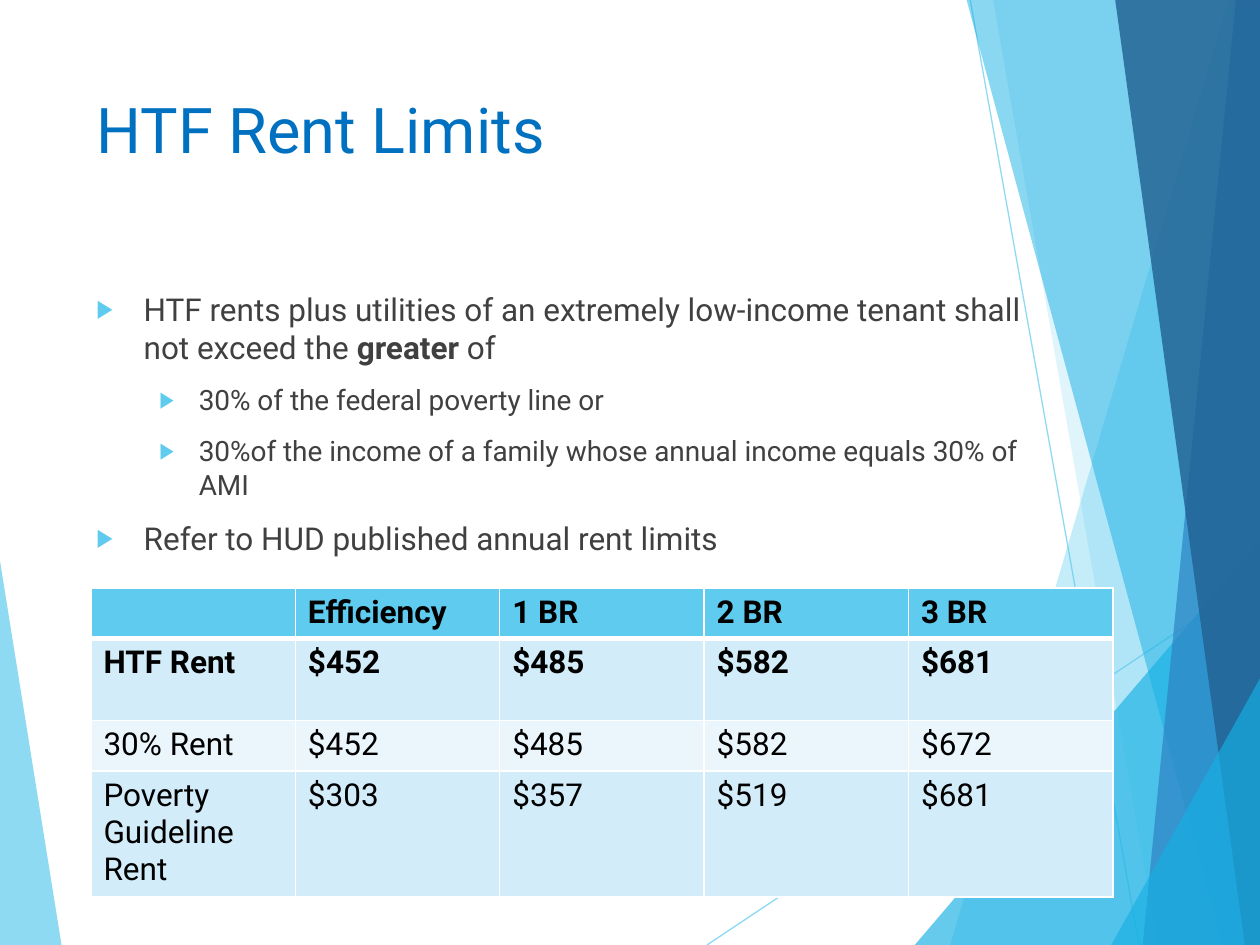
from lxml import etree
from pptx import Presentation
from pptx.dml.color import RGBColor
from pptx.enum.shapes import MSO_CONNECTOR
from pptx.enum.text import MSO_ANCHOR, PP_ALIGN
from pptx.oxml.ns import qn
from pptx.util import Pt

STRAIGHT = MSO_CONNECTOR.STRAIGHT
TOP = MSO_ANCHOR.TOP
LEFT = PP_ALIGN.LEFT
TITLE_ONLY = 5
SKY, CYAN, BLUE, NAVY = "5FCBEF", "17B0E4", "2E83C3", "226292"
WHITE, BLACK = "FFFFFF", "000000"

FACETS_LEFT = [(SKY, 70, [(-0.7, 316), (35.3, 540.7), (-0.7, 540)])]
FACETS_RIGHT = [
    (SKY, 36, [(702, 0), (542.9, 540), (721.4, 540.7), (720.7, 0.7)]),
    (SKY, 20, [(567.4, -0.7), (661.7, 540), (720.7, 540), (720.7, -0.7)]),
    (CYAN, 66, [(522.7, 540), (720, 308.9), (720.7, 540)]),
    (CYAN, 50, [(552.2, -0.7), (698.4, 540), (720.7, 540), (720.7, -0.7)]),
    (BLUE, 70, [(706.3, -0.7), (653, 540), (720.7, 540), (720, -0.7)]),
    (NAVY, 82, [(637.2, -0.7), (711.4, 540), (721.4, 540), (720, -0.7)]),
    (CYAN, 66, [(635, 540), (721.4, 385.2), (721.4, 540)]),
]
RAYS = [((404, 540), (720.7, 329)), ((554.4, 0), (650.9, 540))]
BULLETS = [
    (0, [("HTF rents plus utilities of an extremely low-income tenant shall not exceed the ", False),
         ("greater", True), (" of", False)]),
    (1, [("30% of the federal poverty line or", False)]),
    (1, [("30%of the income of a family whose annual income equals 30% of AMI", False)]),
    (0, [("Refer to HUD published annual rent limits", False)]),
]
RENTS = [
    ["", "Efficiency", "1 BR", "2 BR", "3 BR"],
    ["HTF Rent", "$452", "$485", "$582", "$681"],
    ["30% Rent", "$452", "$485", "$582", "$672"],
    ["Poverty Guideline Rent", "$303", "$357", "$519", "$681"],
]
ROW_HEIGHTS = [27.4, 46.8, 27.4, 65]
ROW_FILLS = [SKY, "D2ECF9", "EAF6FC", "D2ECF9"]


def color(value):
    """Turn a hex string into a colour."""
    return RGBColor.from_string(value)


def add_element(parent, tag, **attributes):
    """Append a DrawingML element to a parent."""
    return etree.SubElement(parent, qn(tag), {key: str(value) for key, value in attributes.items()})


def set_opacity(shape, percent):
    """Make the colours of a shape translucent."""
    for element in shape.element.spPr.iter(qn("a:srgbClr")):
        add_element(element, "a:alpha", val=percent * 1000)


class SlideBuilder:
    """Hold the style and the current slide."""

    font_name = "Roboto"
    levels = [(18, 27, -27), (16, 58.5, -22.5)]

    def __init__(self, slide):
        """Keep the slide to draw on."""
        self.slide = slide

    def style(self, font, size, value):
        """Apply typeface, size and colour to a font."""
        font.name = self.font_name
        font.size = Pt(size)
        font.color.rgb = color(value)

    def facet(self, fill, opacity, points):
        """Draw a translucent polygon."""
        corners = [(Pt(x), Pt(y)) for x, y in points]
        builder = self.slide.shapes.build_freeform(*corners[0], scale=1.0)
        builder.add_line_segments(corners[1:], close=True)
        shape = builder.convert_to_shape()
        shape.shadow.inherit = False
        shape.fill.solid()
        shape.fill.fore_color.rgb = color(fill)
        shape.line.fill.background()
        set_opacity(shape, opacity)

    def ray(self, start, end):
        """Draw a thin translucent line."""
        ends = [Pt(value) for value in (*start, *end)]
        line = self.slide.shapes.add_connector(STRAIGHT, *ends)
        line.line.width = Pt(0.75)
        line.line.color.rgb = color(SKY)
        add_element(line.element.spPr, "a:effectLst")
        set_opacity(line, 70)

    def title(self, text, left, top, width, height):
        """Place and format the title placeholder."""
        shape = self.slide.shapes.title
        shape.left, shape.top, shape.width, shape.height = map(Pt, (left, top, width, height))
        shape.text_frame.text = text
        shape.text_frame.vertical_anchor = TOP
        paragraph = shape.text_frame.paragraphs[0]
        paragraph.alignment = LEFT
        self.style(paragraph.font, 36, "0070C0")

    def bullets(self, items, left, top, width, height):
        """Add a two-level bulleted list."""
        frame = self.slide.shapes.add_textbox(*map(Pt, (left, top, width, height))).text_frame
        frame.word_wrap = True
        for index, (level, runs) in enumerate(items):
            paragraph = frame.add_paragraph() if index else frame.paragraphs[0]
            size, margin, indent = self.levels[level]
            paragraph.level = level
            paragraph.space_before = Pt(10)
            properties = paragraph._p.get_or_add_pPr()
            properties.set("marL", str(Pt(margin)))
            properties.set("indent", str(Pt(indent)))
            add_element(add_element(properties, "a:buClr"), "a:srgbClr", val=SKY)
            add_element(properties, "a:buSzPct", val=80000)
            add_element(properties, "a:buFont", typeface=self.font_name)
            add_element(properties, "a:buChar", char="▶")
            self.style(paragraph.font, size, "404040")
            for text, bold in runs:
                run = paragraph.add_run()
                run.text = text
                if bold:
                    run.font.bold = True

    def cell(self, cell, text, fill, bold, bottom):
        """Fill, border and write one table cell."""
        properties = cell._tc.get_or_add_tcPr()
        for side, width in (("L", 1), ("R", 1), ("T", 1), ("B", bottom)):
            border = add_element(properties, f"a:ln{side}", w=Pt(width))
            add_element(add_element(border, "a:solidFill"), "a:srgbClr", val=WHITE)
        cell.fill.solid()
        cell.fill.fore_color.rgb = color(fill)
        cell.text = text
        paragraph = cell.text_frame.paragraphs[0]
        self.style(paragraph.font, 18, BLACK)
        paragraph.font.bold = bold

    def table(self, rows, heights, fills, left, top, width):
        """Add a table whose first two rows are bold."""
        box = map(Pt, (left, top, width, sum(heights)))
        table = self.slide.shapes.add_table(len(rows), len(rows[0]), *box).table
        for index, (texts, height, fill) in enumerate(zip(rows, heights, fills)):
            table.rows[index].height = Pt(height)
            for column, text in enumerate(texts):
                self.cell(table.cell(index, column), text, fill, index < 2, 1 if index else 3)


def main():
    """Build and save the rent limits slide."""
    presentation = Presentation()
    presentation.slide_width, presentation.slide_height = Pt(720), Pt(540)
    slide = presentation.slides.add_slide(presentation.slide_layouts[TITLE_ONLY])
    builder = SlideBuilder(slide)
    for facet in FACETS_LEFT:
        builder.facet(*facet)
    for ray in RAYS:
        builder.ray(*ray)
    for facet in FACETS_RIGHT:
        builder.facet(*facet)
    builder.title("HTF Rent Limits", 48, 48, 500, 104)
    builder.bullets(BULLETS, 48, 162, 552, 314)
    builder.table(RENTS, ROW_HEIGHTS, ROW_FILLS, 52, 336, 584)
    presentation.save("out.pptx")


if __name__ == "__main__":
    main()
